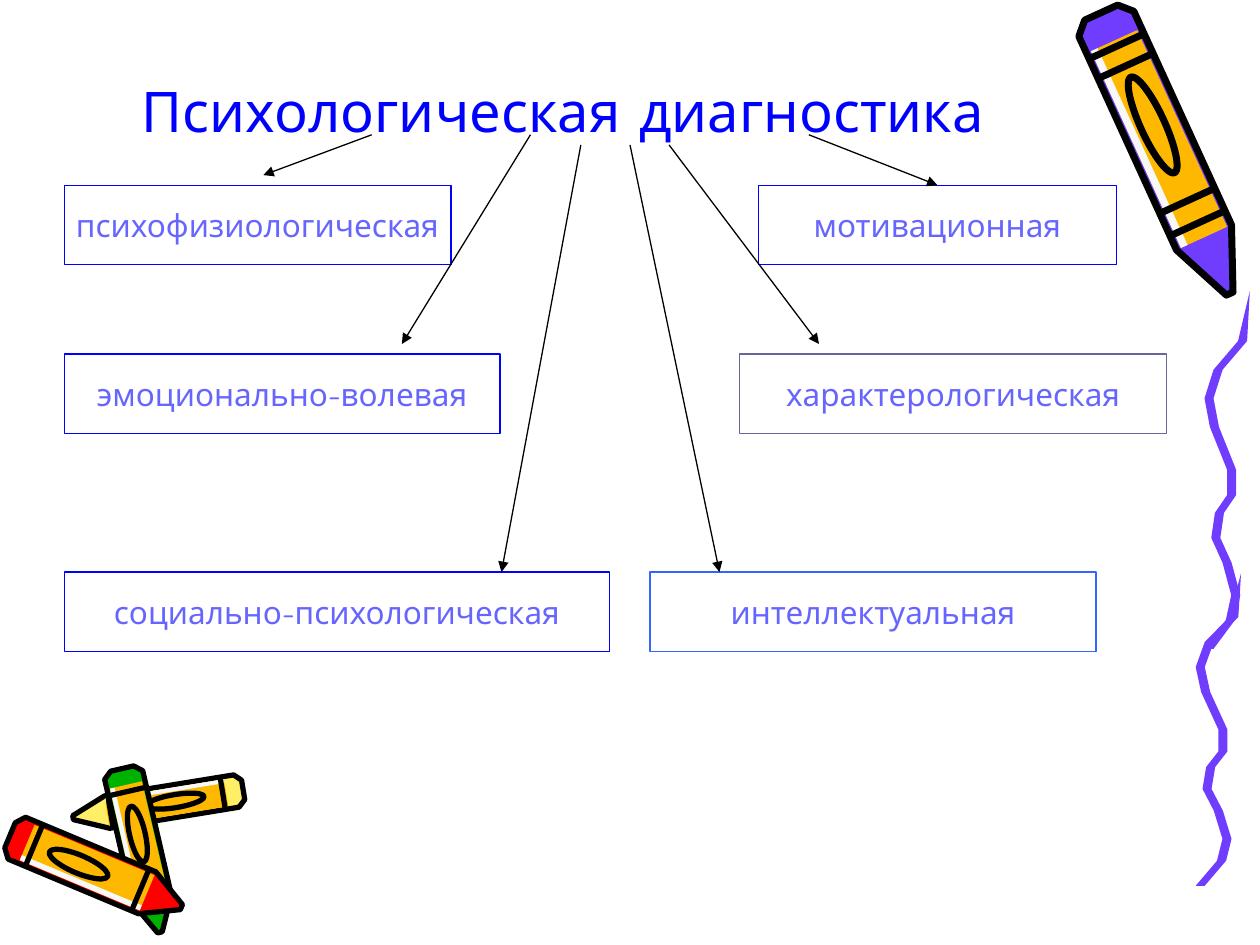
"""Build the slide on the branches of psychological diagnostics."""
import math
from dataclasses import dataclass

from lxml import etree
from pptx import Presentation
from pptx import util as u
from pptx.dml.color import RGBColor
from pptx.enum import shapes, text
from pptx.oxml.ns import qn


@dataclass(frozen=True)
class Theme:
    """Hold the colours, font and sizes of the slide."""
    font: str = "Comic Neue"
    title_size: int = 32
    box_size: int = 18
    thin: float = 0.75
    blue: str = "0000FF"
    label: str = "6666FF"
    slate: str = "666699"
    sky: str = "3366FF"
    white: str = "FFFFFF"
    black: str = "000000"
    violet: str = "703DFF"
    orange: str = "FFB800"
    pale: str = "F8F8F8"
    yellow: str = "FFEF66"
    red: str = "FF0000"
    green: str = "00B200"


@dataclass(frozen=True)
class Crayon:
    """Describe a crayon by its axis, thickness, colour, ring positions and stroke."""
    tail: tuple
    tip: tuple
    thickness: float
    colour: str
    rings: tuple
    stroke: float

    @property
    def length(self):
        """Return the distance from tail to tip."""
        return math.dist(self.tail, self.tip)

    @property
    def angle(self):
        """Return the direction of the axis in radians."""
        return math.atan2(self.tip[1] - self.tail[1], self.tip[0] - self.tail[0])

    def place(self, along, across):
        """Turn shares of the length and thickness into slide inches."""
        forward, sideways = along * self.length, across * self.thickness
        cosine, sine = math.cos(self.angle), math.sin(self.angle)
        return (self.tail[0] + forward * cosine - sideways * sine,
                self.tail[1] + forward * sine + sideways * cosine)


THEME = Theme()
BOX_HEIGHT = 0.63
ROW_TOPS = (1.47, 2.81, 4.54)
SLEEVE_START, SLEEVE_END = 0.1, 0.8
OVAL_CENTRE, OVAL_LENGTH, OVAL_WIDTH = 0.4, 0.34, 0.4
CRAYON_SIDE = ((0, 0.3), (0.04, 0.5), (SLEEVE_END, 0.5), (1, 0.06))
WAVE_TURNS = ((0, 1), (0.14, 0.84), (0.22, 0.3), (0.3, 0.1), (0.38, 0.22), (0.5, 0.6), (0.57, 0.6),
              (0.62, 0.33), (0.69, 0.25), (0.76, 0.5), (0.85, 0.69), (0.92, 0.57), (1, 0.1))
WAVE_HALF_THICKNESS = 0.1


def rgb(code):
    """Turn a hex code into a colour."""
    return RGBColor.from_string(code)


def style_shape(shape, fill=None, border=None, width=THEME.thin):
    """Set the fill and border of a shape, leaving out what is not given."""
    shape.shadow.inherit = False
    if fill:
        shape.fill.solid()
        shape.fill.fore_color.rgb = rgb(fill)
    else:
        shape.fill.background()
    if border:
        shape.line.color.rgb = rgb(border)
        shape.line.width = u.Pt(width)
    else:
        shape.line.fill.background()


def add_polygon(parent, points, fill, border=None, width=THEME.thin):
    """Add a closed outline through points given in inches."""
    start, *others = [(u.Inches(x), u.Inches(y)) for x, y in points]
    builder = parent.shapes.build_freeform(*start)
    builder.add_line_segments(others, close=True)
    style_shape(builder.convert_to_shape(), fill, border, width)


def add_line(parent, start, end, width, arrow=False):
    """Add a black line, with an arrowhead at its end if asked."""
    line = parent.shapes.add_connector(shapes.MSO_CONNECTOR.STRAIGHT, *map(u.Inches, start + end))
    line.line.color.rgb = rgb(THEME.black)
    line.line.width = u.Pt(width)
    properties = line.element.spPr
    if arrow:
        etree.SubElement(properties.find(qn("a:ln")), qn("a:tailEnd"), type="triangle")
    etree.SubElement(properties, qn("a:effectLst"))
    return line


def add_crayon(page, crayon):
    """Draw a crayon as a coloured body with a sleeve, a highlight, rings and an oval."""
    group = page.shapes.add_group_shape()

    def add_band(start, end, low, high, fill):
        """Fill a stretch of the crayon between two shares of its thickness."""
        corners = ((start, low), (end, low), (end, high), (start, high))
        add_polygon(group, [crayon.place(*corner) for corner in corners], fill)

    mirrored = [(along, -across) for along, across in reversed(CRAYON_SIDE)]
    silhouette = [crayon.place(*point) for point in (*CRAYON_SIDE, *mirrored)]
    add_polygon(group, silhouette, crayon.colour, THEME.black, crayon.stroke)
    add_band(SLEEVE_START, SLEEVE_END, -0.42, 0.42, THEME.orange)
    add_band(SLEEVE_START, SLEEVE_END, 0.3, 0.42, THEME.pale)
    for ring in crayon.rings:
        add_line(group, crayon.place(ring, -0.45), crayon.place(ring, 0.45), crayon.stroke)

    centre_x, centre_y = crayon.place(OVAL_CENTRE, 0)
    width, height = OVAL_LENGTH * crayon.length, OVAL_WIDTH * crayon.thickness
    oval = group.shapes.add_shape(shapes.MSO_SHAPE.OVAL, u.Inches(centre_x - width / 2),
                                  u.Inches(centre_y - height / 2), u.Inches(width), u.Inches(height))
    oval.rotation = math.degrees(crayon.angle)
    style_shape(oval, border=THEME.black, width=crayon.stroke)


def add_wave(page, left, top, width, height):
    """Draw a ribbon that starts at a point and swings through the turns."""
    def edge(side):
        """Return one edge of the ribbon from top to bottom."""
        return [(left + width * (across + side * WAVE_HALF_THICKNESS * (down > 0)), top + height * down)
                for down, across in WAVE_TURNS]

    add_polygon(page, edge(-1) + edge(1)[::-1], THEME.violet)


def write_centred(frame, words, size, colour):
    """Put one centred run of text in a frame."""
    para = frame.paragraphs[0]
    para.alignment = text.PP_ALIGN.CENTER
    span = para.add_run()
    span.text = words
    span.font.name = THEME.font
    span.font.size = u.Pt(size)
    span.font.color.rgb = rgb(colour)


def set_title(page, words):
    """Place and fill the title placeholder."""
    title = page.shapes.title
    title.left, title.top = u.Inches(0.67), u.Inches(0.44)
    title.width, title.height = u.Inches(7.6), u.Inches(0.75)
    title.text_frame.vertical_anchor = text.MSO_ANCHOR.BOTTOM
    write_centred(title.text_frame, words, THEME.title_size, THEME.blue)


def add_box(page, words, left, top, width, border):
    """Add a bordered box with a label and return it."""
    box = page.shapes.add_shape(shapes.MSO_SHAPE.RECTANGLE, u.Inches(left), u.Inches(top),
                                u.Inches(width), u.Inches(BOX_HEIGHT))
    style_shape(box, THEME.white, border)
    box.text_frame.word_wrap = False
    box.text_frame.vertical_anchor = text.MSO_ANCHOR.MIDDLE
    write_centred(box.text_frame, words, THEME.box_size, THEME.label)
    return box


def main():
    """Build and save the slide."""
    deck = Presentation()
    deck.slide_width, deck.slide_height = u.Inches(10), u.Inches(7.5)
    page = deck.slides.add_slide(deck.slide_layouts[5])

    crayons = (
        Crayon((1.93, 6.27), (0.58, 6.49), 0.26, THEME.yellow, (0.12, 0.78), 3),
        Crayon((0.97, 6.1), (1.27, 7.4), 0.31, THEME.green, (0.14,), 3),
        Crayon((0.08, 6.63), (1.44, 7.2), 0.36, THEME.red, (0.14, 0.76), 3),
        Crayon((8.74, 0.1), (9.76, 2.33), 0.48, THEME.violet, (0.12, 0.19, 0.67, 0.75), 4),
    )
    for crayon in crayons:
        add_crayon(page, crayon)
    add_wave(page, 9.49, 4.55, 0.36, 2.48)
    add_wave(page, 9.56, 2.31, 0.36, 2.84)
    set_title(page, "Психологическая диагностика")

    upper, middle, lower = ROW_TOPS
    branches = (
        ("психофизиологическая", 0.51, upper, 3.07, THEME.blue, (2.95, 1.07), (2.09, 1.39)),
        ("мотивационная", 6.02, upper, 2.84, THEME.blue, (6.42, 1.07), (7.44, upper)),
        ("социально-психологическая", 0.51, lower, 4.33, THEME.blue, (4.61, 1.15), (3.98, lower)),
        ("характерологическая", 5.87, middle, 3.39, THEME.slate, (5.31, 1.15), (6.5, 2.73)),
        ("эмоционально-волевая", 0.51, middle, 3.46, THEME.blue, (4.21, 1.07), (3.19, 2.73)),
        ("интеллектуальная", 5.16, lower, 3.54, THEME.sky, (5, 1.15), (5.71, lower)),
    )
    boxes = {branch[0]: add_box(page, *branch[:5]) for branch in branches}
    arrows = {words: add_line(page, start, end, THEME.thin, arrow=True)
              for words, *_, start, end in branches}
    arrows["мотивационная"].end_connect(boxes["мотивационная"], 0)
    deck.save("out.pptx")


if __name__ == "__main__":
    main()
